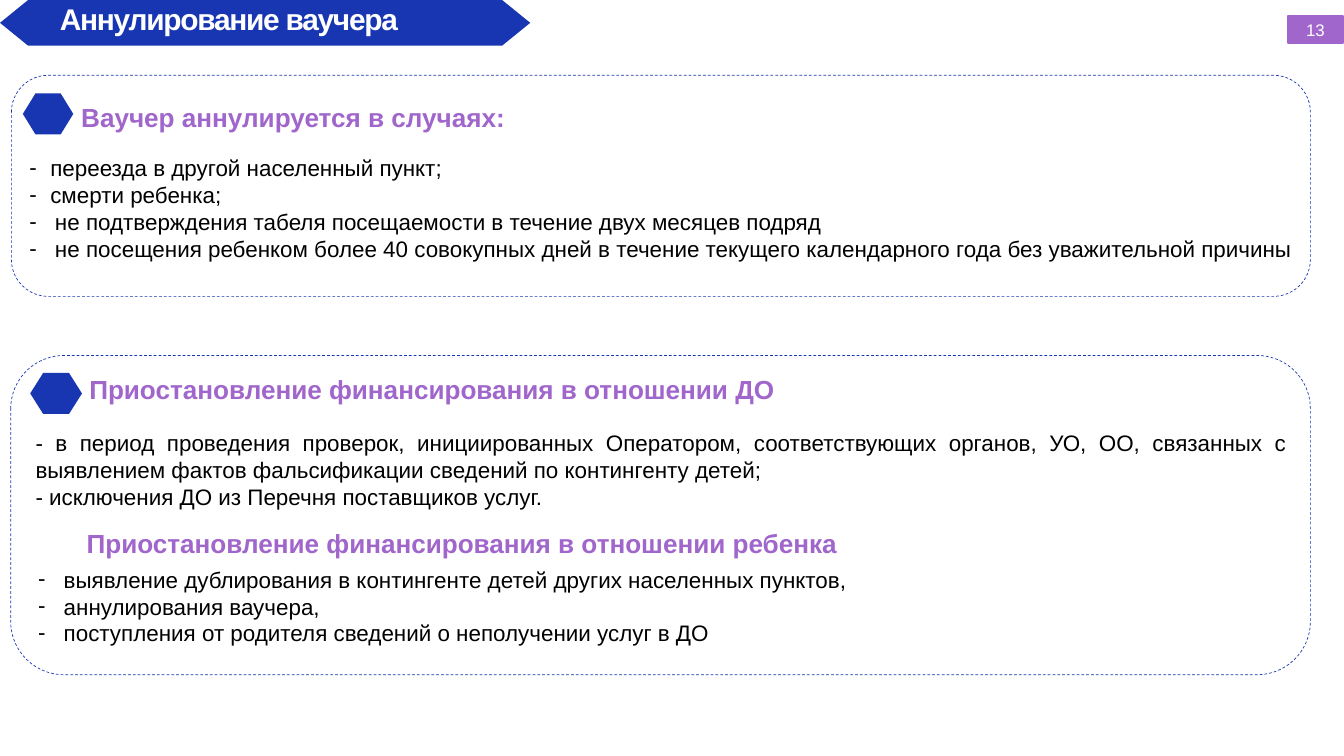
from typing import NamedTuple

from lxml import etree
from pptx import Presentation
from pptx.dml.color import RGBColor
from pptx.enum.dml import MSO_LINE
from pptx.enum.shapes import MSO_SHAPE
from pptx.enum.text import MSO_ANCHOR, MSO_AUTO_SIZE, PP_ALIGN
from pptx.oxml.ns import qn
from pptx.util import Inches, Pt

BLUE = RGBColor(0x18, 0x36, 0xB2)
PURPLE = RGBColor(0xA0, 0x66, 0xCB)
BLACK = RGBColor(0, 0, 0)
WHITE = RGBColor(0xFF, 0xFF, 0xFF)
FONT = "Arial"
LEFT, CENTER, JUSTIFY = PP_ALIGN.LEFT, PP_ALIGN.CENTER, PP_ALIGN.JUSTIFY
TOP, MIDDLE = MSO_ANCHOR.TOP, MSO_ANCHOR.MIDDLE
GROW, FIXED = MSO_AUTO_SIZE.SHAPE_TO_FIT_TEXT, MSO_AUTO_SIZE.NONE
DASH = MSO_LINE.DASH
ROUNDED, RECTANGLE = MSO_SHAPE.ROUNDED_RECTANGLE, MSO_SHAPE.RECTANGLE

# The slide is a grid of 20 columns by 11.25 rows
COLUMNS, ROWS = 20, 11.25
SLIDE_WIDTH, SLIDE_HEIGHT = Inches(20), Inches(11.25)


class Area(NamedTuple):
    """Left, top, width and height in grid columns and rows."""
    left: float
    top: float
    width: float
    height: float

    def lengths(self) -> tuple[int, ...]:
        column, row = SLIDE_WIDTH / COLUMNS, SLIDE_HEIGHT / ROWS
        return (round(self.left * column), round(self.top * row),
                round(self.width * column), round(self.height * row))


class Heading(NamedTuple):
    area: Area
    text: str


class Body(NamedTuple):
    area: Area
    lines: list[str]
    indents: list[float]  # hanging indent of each dashed line, 0 for plain text


class Section(NamedTuple):
    frame: Area
    marker: Area
    headings: list[Heading]
    bodies: list[Body]


SECTIONS = [
    Section(
        Area(0.17, 1.12, 19.33, 3.29),
        Area(0.34, 1.39, 0.75, 0.61),
        [Heading(Area(1.11, 1.46, 6.59, 0.57), "Ваучер аннулируется в случаях:")],
        [Body(Area(0.34, 2.25, 19.16, 1.72), [
            "переезда в другой населенный пункт;",
            "смерти ребенка;",
            "не подтверждения табеля посещаемости в течение двух месяцев подряд",
            "не посещения ребенком более 40 совокупных дней в течение текущего "
            "календарного года без уважительной причины",
        ], [0.31, 0.31, 0.38, 0.38])],
    ),
    Section(
        Area(0.16, 5.29, 19.34, 4.75),
        Area(0.45, 5.55, 0.77, 0.61),
        [Heading(Area(1.23, 5.5, 10.81, 0.57),
                 "Приостановление финансирования в отношении ДО"),
         Heading(Area(1.19, 7.8, 11.5, 0.57),
                 "Приостановление финансирования в отношении ребенка")],
        [Body(Area(0.43, 6.34, 18.81, 1.31), [
            "- в период проведения проверок, инициированных Оператором, "
            "соответствующих органов, УО, ОО, связанных с выявлением фактов "
            "фальсификации сведений по контингенту детей;",
            "- исключения ДО из Перечня поставщиков услуг.",
        ], [0, 0]),
         Body(Area(0.47, 8.37, 18.57, 1.31), [
             "выявление дублирования в контингенте детей других населенных пунктов,",
             "аннулирования ваучера,",
             "поступления от родителя сведений о неполучении услуг в ДО",
         ], [0.38, 0.38, 0.38])],
    ),
]


def add_dash_bullet(para, indent: float) -> None:
    properties = para._p.get_or_add_pPr()
    properties.set("marL", str(Inches(indent)))
    properties.set("indent", str(-Inches(indent)))
    etree.SubElement(properties, qn("a:buFont")).set("typeface", FONT)
    etree.SubElement(properties, qn("a:buChar")).set("char", "-")


def write_text(shape, lines: list[str], *, size: float, color: RGBColor,
               bold: bool = False, align=LEFT, anchor=TOP, wrap: bool = True,
               auto_size=GROW, inset: bool = True, spacing: float = 0,
               indents: list[float] | None = None) -> None:
    frame = shape.text_frame
    frame.word_wrap, frame.auto_size = wrap, auto_size
    frame.vertical_anchor = anchor
    if not inset:
        frame.margin_left = frame.margin_right = 0
        frame.margin_top = frame.margin_bottom = 0
    for index, line in enumerate(lines):
        para = frame.add_paragraph() if index else frame.paragraphs[0]
        para.alignment = align
        if indents and indents[index]:
            add_dash_bullet(para, indents[index])
        span = para.add_run()
        span.text = line
        font = span.font
        font.name, font.size, font.bold = FONT, Pt(size), bold
        font.color.rgb = color
        if spacing:
            span._r.get_or_add_rPr().set("spc", str(round(spacing * 100)))


def add_hexagon(page, area: Area, tip: float) -> None:
    """Draw a hexagon whose side tips take the given share of its width."""
    left, top, width, height = area.lengths()
    inner, outer = left + round(tip * width), left + round((1 - tip) * width)
    middle, right, bottom = top + height // 2, left + width, top + height
    builder = page.shapes.build_freeform(inner, top)
    builder.add_line_segments([(outer, top), (right, middle), (outer, bottom),
                               (inner, bottom), (left, middle)], close=True)
    shape = builder.convert_to_shape()
    shape.shadow.inherit = False
    shape.fill.solid()
    shape.fill.fore_color.rgb = BLUE
    shape.line.fill.background()


def add_frame(page, area: Area) -> None:
    shape = page.shapes.add_shape(ROUNDED, *area.lengths())
    shape.shadow.inherit = False
    shape.fill.background()
    shape.line.color.rgb = BLUE
    shape.line.width = Pt(0.75)
    shape.line.dash_style = DASH


def add_section(page, section: Section) -> None:
    add_frame(page, section.frame)
    add_hexagon(page, section.marker, 0.25)
    for heading in section.headings:
        box = page.shapes.add_textbox(*heading.area.lengths())
        write_text(box, [heading.text], size=28, color=PURPLE, bold=True, wrap=False)
    for body in section.bodies:
        box = page.shapes.add_textbox(*body.area.lengths())
        write_text(box, body.lines, size=24, color=BLACK, indents=body.indents,
                   align=LEFT if any(body.indents) else JUSTIFY)


def add_title(page) -> None:
    add_hexagon(page, Area(0, 0, 7.89, 0.68), 0.053)
    title = page.shapes.title
    title.left, title.top, title.width, title.height = Area(
        0.89, 0.01, 7.17, 0.54).lengths()
    write_text(title, ["Аннулирование ваучера"], size=32, color=WHITE, bold=True,
               inset=False, spacing=-1.4)
    # Bring the title in front of its banner
    page.shapes._spTree.append(title._element)


def add_page_number(page) -> None:
    badge = page.shapes.add_shape(RECTANGLE, *Area(19.17, 0.24, 0.81, 0.4).lengths())
    badge.shadow.inherit = False
    badge.fill.solid()
    badge.fill.fore_color.rgb = badge.line.color.rgb = PURPLE
    badge.line.width = Pt(2)
    write_text(badge, ["13"], size=18, color=WHITE, align=CENTER, anchor=MIDDLE,
               auto_size=FIXED)


def main() -> None:
    deck = Presentation()
    deck.slide_width, deck.slide_height = SLIDE_WIDTH, SLIDE_HEIGHT
    page = deck.slides.add_slide(deck.slide_layouts.get_by_name("Title Only"))
    add_title(page)
    for section in SECTIONS:
        add_section(page, section)
    add_page_number(page)
    deck.save("out.pptx")


if __name__ == "__main__":
    main()
